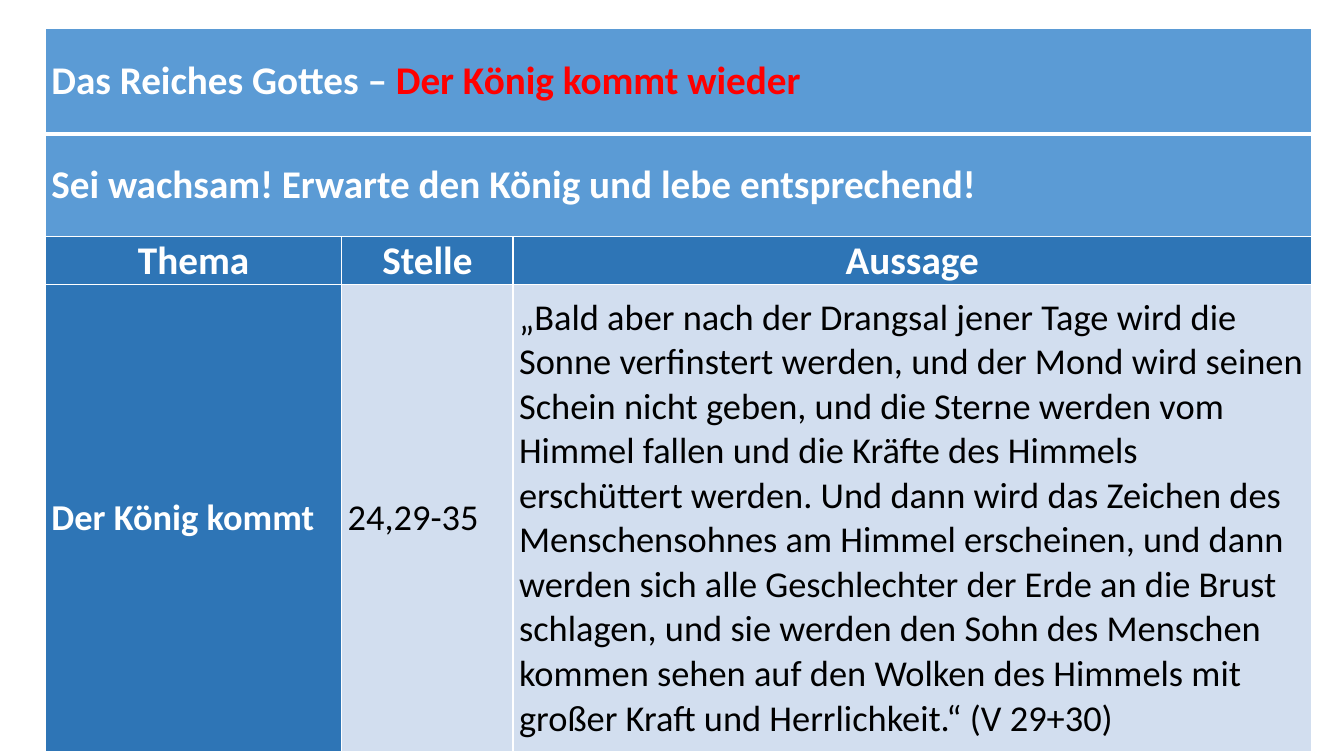
from lxml import etree
from pptx import Presentation
from pptx.dml.color import RGBColor
from pptx.enum.text import MSO_ANCHOR, PP_ALIGN
from pptx.oxml.ns import qn
from pptx.util import Pt

MIDDLE = MSO_ANCHOR.MIDDLE
LEFT, CENTER = PP_ALIGN.LEFT, PP_ALIGN.CENTER

WHITE = RGBColor(0xFF, 0xFF, 0xFF)
BLACK = RGBColor(0, 0, 0)
RED = RGBColor(0xFF, 0, 0)
BLUE = RGBColor(0x5B, 0x9B, 0xD5)
DARK_BLUE = RGBColor(0x2E, 0x75, 0xB6)
PALE_BLUE = RGBColor(0xD2, 0xDE, 0xEF)

COLUMN_WIDTHS = (211.7, 122.4, 570.2)
ROW_HEIGHTS = (75.6, 73.4, 23, 333.4)
THIN, THICK = 1, 3

HEADING = {"name": "Calibri", "size": Pt(28), "bold": True}
LABEL = {**HEADING, "size": Pt(26)}
BODY = {**LABEL, "bold": False}

BANNERS = (
    (("Das Reiches Gottes – ", WHITE), ("Der König kommt wieder", RED)),
    (("Sei wachsam! Erwarte den König und lebe entsprechend!", WHITE),),
)
COLUMN_TITLES = ("Thema", "Stelle", "Aussage")
THEME = "Der König kommt"
PASSAGE = "24,29-35"
QUOTE = (
    "„Bald aber nach der Drangsal jener Tage wird die Sonne verfinstert werden, "
    "und der Mond wird seinen Schein nicht geben, und die Sterne werden vom "
    "Himmel fallen und die Kräfte des Himmels erschüttert werden. Und dann wird "
    "das Zeichen des Menschensohnes am Himmel erscheinen, und dann werden sich "
    "alle Geschlechter der Erde an die Brust schlagen, und sie werden den Sohn "
    "des Menschen kommen sehen auf den Wolken des Himmels mit großer Kraft und "
    "Herrlichkeit.“ (V 29+30)"
)


def add_border(cell, side, width):
    properties = cell._tc.get_or_add_tcPr()
    line = etree.SubElement(properties, qn(f"a:ln{side}"), w=str(Pt(width)))
    fill = etree.SubElement(line, qn("a:solidFill"))
    etree.SubElement(fill, qn("a:srgbClr"), val=str(WHITE))


def style_cell(cell, row, fill):
    widths = {
        "L": THIN,
        "R": THIN,
        "T": THICK if row == 1 else THIN,
        "B": THICK if row == 0 else THIN,
    }
    for side, width in widths.items():
        add_border(cell, side, width)
    cell.fill.solid()
    cell.fill.fore_color.rgb = fill
    layout = {
        "margin_left": Pt(4.3),
        "margin_right": Pt(4.3),
        "margin_top": 0,
        "margin_bottom": 0,
        "vertical_anchor": MIDDLE,
    }
    for name, value in layout.items():
        setattr(cell, name, value)


def write_cell(cell, spans, text_format, alignment=LEFT):
    para = cell.text_frame.paragraphs[0]
    para.alignment = alignment
    for text, color in spans:
        span = para.add_run()
        span.text = text
        for name, value in text_format.items():
            setattr(span.font, name, value)
        span.font.color.rgb = color


def add_grid(page):
    frame = page.shapes.add_table(
        len(ROW_HEIGHTS), len(COLUMN_WIDTHS), Pt(32.4), Pt(20.2),
        Pt(sum(COLUMN_WIDTHS)), Pt(sum(ROW_HEIGHTS)),
    )
    table = frame.table
    for column, width in zip(table.columns, COLUMN_WIDTHS):
        column.width = Pt(width)
    for row, height in zip(table.rows, ROW_HEIGHTS):
        row.height = Pt(height)
    row_fills = (
        (BLUE,) * 3,
        (BLUE,) * 3,
        (DARK_BLUE,) * 3,
        (DARK_BLUE, PALE_BLUE, PALE_BLUE),
    )
    for row, fills in enumerate(row_fills):
        for column, fill in enumerate(fills):
            style_cell(table.cell(row, column), row, fill)
    return table


def main():
    deck = Presentation()
    deck.slide_width, deck.slide_height = Pt(960), Pt(540)
    page = deck.slides.add_slide(deck.slide_layouts[6])
    table = add_grid(page)

    for row, spans in enumerate(BANNERS):
        table.cell(row, 0).merge(table.cell(row, 2))
        write_cell(table.cell(row, 0), spans, HEADING)
    for column, title in enumerate(COLUMN_TITLES):
        write_cell(table.cell(2, column), [(title, WHITE)], HEADING, CENTER)
    write_cell(table.cell(3, 0), [(THEME, WHITE)], LABEL)
    write_cell(table.cell(3, 1), [(PASSAGE, BLACK)], BODY)
    write_cell(table.cell(3, 2), [(QUOTE, BLACK)], BODY)

    deck.save("out.pptx")


if __name__ == "__main__":
    main()
